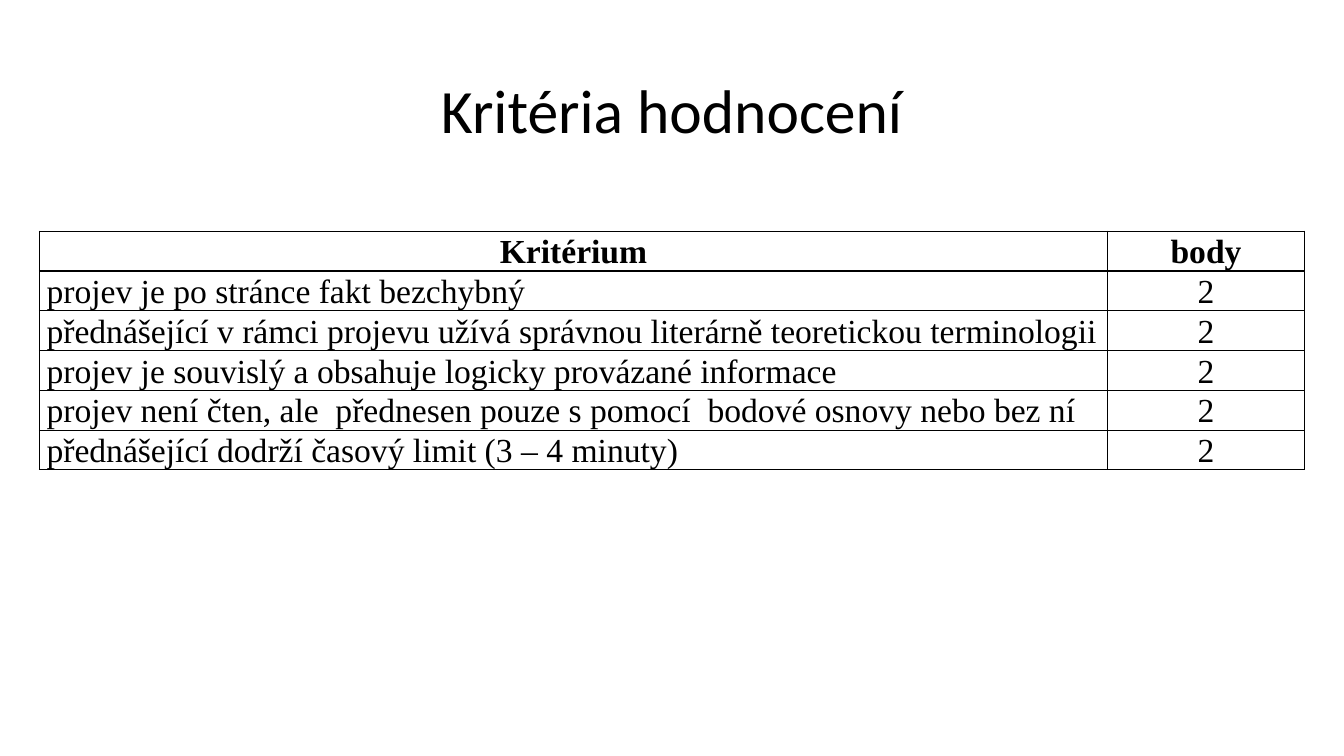
from dataclasses import dataclass

from lxml import etree
from pptx import Presentation
from pptx.dml.color import RGBColor
from pptx.enum.text import MSO_ANCHOR, PP_ALIGN
from pptx.oxml.ns import qn
from pptx.util import Pt

CENTER, LEFT = PP_ALIGN.CENTER, PP_ALIGN.LEFT
MIDDLE = MSO_ANCHOR.MIDDLE

TITLE = "Kritéria hodnocení"
CRITERIA = [
    ("Kritérium", "body"),
    ("projev je po stránce fakt bezchybný", "2"),
    ("přednášející v rámci projevu užívá správnou literárně teoretickou terminologii", "2"),
    ("projev je souvislý a obsahuje logicky provázané informace", "2"),
    ("projev není čten, ale  přednesen pouze s pomocí  bodové osnovy nebo bez ní", "2"),
    ("přednášející dodrží časový limit (3 – 4 minuty)", "2"),
]

SLIDE_SIZE = (960, 540)
TITLE_BOX = (66, 28.8, 828, 104.4)
TABLE_LEFT, TABLE_TOP = 28.2, 165.2
COLUMN_WIDTHS = (763, 140.6)
ROW_HEIGHT = 28.35
CELL_MARGIN = 5.04


@dataclass(frozen=True)
class Theme:
    ink: str = "000000"
    title_font: str = "Calibri"
    title_size: int = 44
    table_font: str = "Times New Roman"
    table_size: int = 24
    border_width: int = 1


THEME = Theme()


def format_paragraph(paragraph, font_name, size, alignment, line_spacing, bold=False):
    paragraph.alignment = alignment
    paragraph.line_spacing = line_spacing
    for run in paragraph.runs:
        run.font.name = font_name
        run.font.size = Pt(size)
        run.font.bold = bold
        run.font.color.rgb = RGBColor.from_string(THEME.ink)


def add_borders(cell):
    """Draw all four sides; must run before the cell fill is set."""
    properties = cell._tc.get_or_add_tcPr()
    for side in ("a:lnL", "a:lnR", "a:lnT", "a:lnB"):
        line = etree.SubElement(properties, qn(side), w=str(Pt(THEME.border_width)))
        fill = etree.SubElement(line, qn("a:solidFill"))
        etree.SubElement(fill, qn("a:srgbClr"), val=THEME.ink)


def add_title(slide):
    title = slide.shapes.title
    title.left, title.top, title.width, title.height = map(Pt, TITLE_BOX)
    title.text_frame.text = TITLE
    title.text_frame.vertical_anchor = MIDDLE
    format_paragraph(title.text_frame.paragraphs[0], THEME.title_font,
                     THEME.title_size, CENTER, 0.9)


def add_criteria_table(slide):
    table = slide.shapes.add_table(
        len(CRITERIA), len(COLUMN_WIDTHS), Pt(TABLE_LEFT), Pt(TABLE_TOP),
        Pt(sum(COLUMN_WIDTHS)), Pt(ROW_HEIGHT * len(CRITERIA))).table
    table.horz_banding = False
    for column, width in zip(table.columns, COLUMN_WIDTHS):
        column.width = Pt(width)
    for row_index, values in enumerate(CRITERIA):
        table.rows[row_index].height = Pt(ROW_HEIGHT)
        is_header = row_index == 0
        for column_index, value in enumerate(values):
            cell = table.cell(row_index, column_index)
            cell.margin_left = cell.margin_right = Pt(CELL_MARGIN)
            cell.margin_top = cell.margin_bottom = Pt(0)
            add_borders(cell)
            cell.fill.background()
            cell.text_frame.text = value
            alignment = CENTER if is_header or column_index == 1 else LEFT
            format_paragraph(cell.text_frame.paragraphs[0], THEME.table_font,
                             THEME.table_size, alignment, 1.07, is_header)


def main():
    presentation = Presentation()
    presentation.slide_width, presentation.slide_height = map(Pt, SLIDE_SIZE)
    slide = presentation.slides.add_slide(presentation.slide_layouts.get_by_name("Title Only"))
    add_title(slide)
    add_criteria_table(slide)
    presentation.save("out.pptx")


if __name__ == "__main__":
    main()
